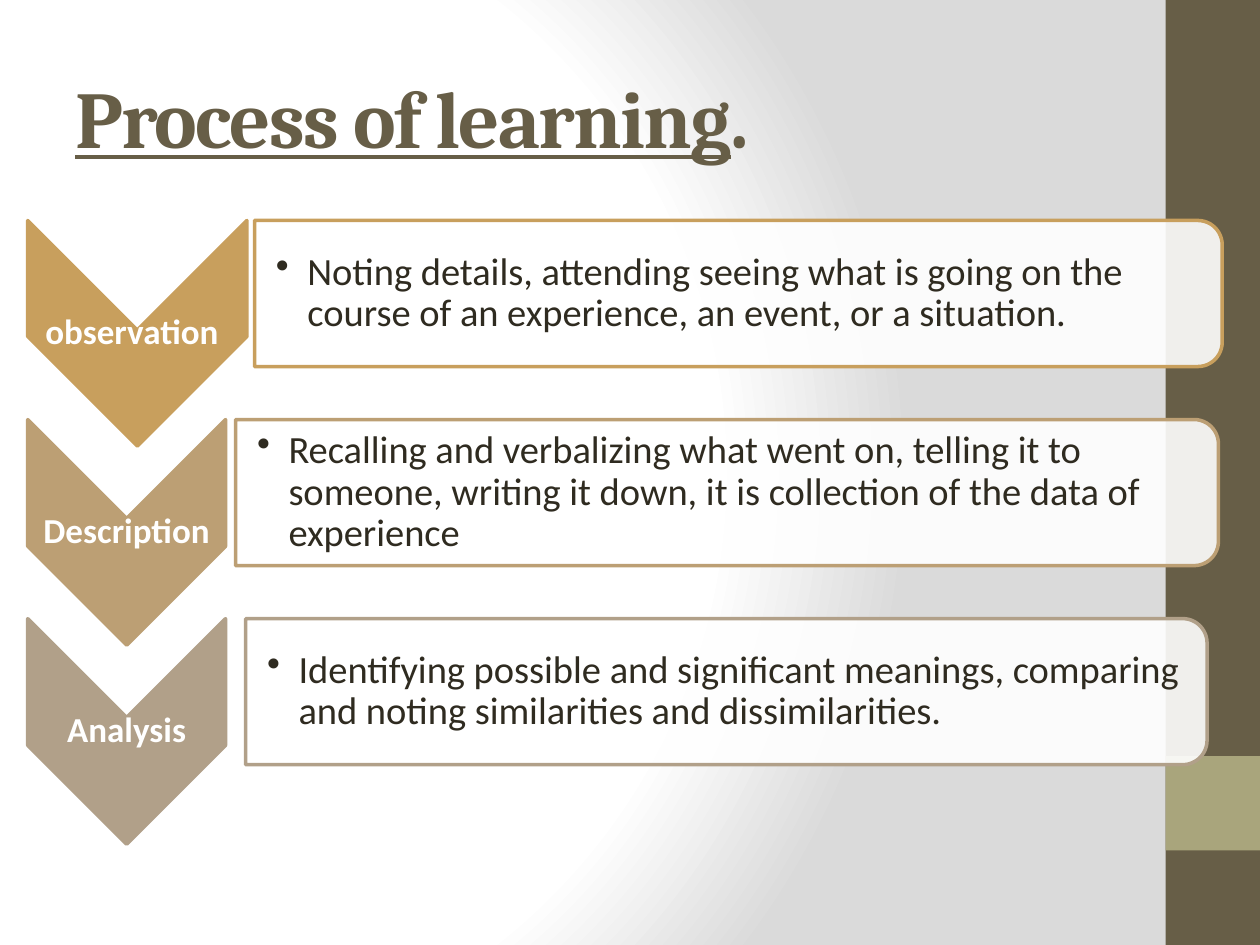
"""Build the "Process of learning" slide with three chevron steps."""
from lxml import etree
from pptx import Presentation
from pptx.dml.color import RGBColor
from pptx.enum.shapes import MSO_SHAPE
from pptx.enum.text import MSO_ANCHOR, PP_ALIGN
from pptx.oxml.ns import qn
from pptx.util import Inches, Pt

WHITE = RGBColor(0xFF, 0xFF, 0xFF)
GREY = RGBColor(0xDA, 0xDA, 0xDA)
BROWN = RGBColor(0x67, 0x5E, 0x47)
OLIVE = RGBColor(0xA9, 0xA5, 0x7C)
INK = RGBColor(0x2F, 0x2B, 0x20)
GOLD = RGBColor(0xC8, 0x9F, 0x5D)
TAN = RGBColor(0xBC, 0x9F, 0x74)
TAUPE = RGBColor(0xB1, 0xA0, 0x89)

TOP, PITCH = 1.75, 1.58
CHEVRON_LEFT, CHEVRON_H, CARD_H = 0.22, 1.79, 1.16
STEPS = [
    ("observation", GOLD, 1.74, 2.02, 7.68, PP_ALIGN.LEFT, 0.14,
     "Noting details, attending seeing what is going on the course of an "
     "experience, an event, or a situation."),
    ("Description", TAN, 1.57, 1.87, 7.8, PP_ALIGN.CENTER, 0.01,
     "Recalling and verbalizing what went on, telling it to someone, writing "
     "it down, it is collection of the data of experience"),
    ("Analysis", TAUPE, 1.57, 1.95, 7.63, PP_ALIGN.CENTER, 0.01,
     "Identifying possible and significant meanings, comparing and noting "
     "similarities and dissimilarities."),
]


def add_block(kind, x, y, w, h, fill, line=None, turned=False):
    if turned:
        x, y, w, h = x + (w - h) / 2, y + (h - w) / 2, h, w
    sp = s.shapes.add_shape(kind, Inches(x), Inches(y), Inches(w), Inches(h))
    sp.shadow.inherit = False
    sp.rotation = 90 if turned else 0
    sp.fill.solid()
    sp.fill.fore_color.rgb = fill
    if line is None:
        sp.line.fill.background()
    else:
        sp.line.color.rgb = line
        sp.line.width = Pt(2)
    return sp


def add_words(x, y, w, h, runs, font, size, color, bold, insets):
    tf = s.shapes.add_textbox(Inches(x), Inches(y), Inches(w), Inches(h)).text_frame
    tf.word_wrap = True
    tf.vertical_anchor = MSO_ANCHOR.MIDDLE
    tf.margin_left, tf.margin_top, tf.margin_right, tf.margin_bottom = map(Inches, insets)
    p = tf.paragraphs[0]
    for words, underline in runs:
        r = p.add_run()
        r.text = words
        r.font.name, r.font.size = font, Pt(size)
        r.font.bold, r.font.underline = bold, underline
        r.font.color.rgb = color
    return p


prs = Presentation()
prs.slide_width, prs.slide_height = Inches(10), Inches(7.5)
s = prs.slides.add_slide(prs.slide_layouts[6])

s.background.fill.gradient()
grad = s.element.find(".//" + qn("a:gradFill"))
for child in list(grad):
    grad.remove(child)
stops = etree.SubElement(grad, qn("a:gsLst"))
for pos, color in ((0, WHITE), (75, WHITE), (100, GREY)):
    stop = etree.SubElement(stops, qn("a:gs"), pos=str(pos * 1000))
    etree.SubElement(stop, qn("a:srgbClr"), val=str(color))
circle = etree.SubElement(grad, qn("a:path"), attrib={"path": "circle"})
etree.SubElement(circle, qn("a:fillToRect"), l="20000", t="50000", r="100000", b="50000")

add_block(MSO_SHAPE.RECTANGLE, 9.25, 0, 0.75, 7.5, BROWN)
add_block(MSO_SHAPE.RECTANGLE, 9.25, 6, 0.75, 0.75, OLIVE)

title = add_words(0.5, 0.3, 8.33, 1.25, [("Process of learning", True), (".", False)],
                  "Cambria", 46, BROWN, True, (0.1, 0.05, 0.1, 0.05))
for r in title.runs:
    r.font._element.set("spc", "-100")

for i, (label, color, chevron_w, card_x, card_w, align, inset, detail) in enumerate(STEPS):
    y = TOP + i * PITCH
    add_block(MSO_SHAPE.CHEVRON, CHEVRON_LEFT, y, chevron_w, CHEVRON_H, color, color, True)
    p = add_words(CHEVRON_LEFT, y, chevron_w, CHEVRON_H, [(label, None)],
                  "Calibri", 20, WHITE, True, (inset, 0.01, 0.01, 0.01))
    p.alignment = align
    p.line_spacing = 0.9

    card = add_block(MSO_SHAPE.ROUND_2_SAME_RECTANGLE, card_x, y, card_w, CARD_H,
                     WHITE, color, True)
    white = card.element.spPr.find(qn("a:solidFill")).find(qn("a:srgbClr"))
    etree.SubElement(white, qn("a:alpha"), val="90000")
    p = add_words(card_x, y + 0.05, card_w - 0.06, CARD_H - 0.1, [(detail, None)],
                  "Calibri", 22, INK, False, (0.17, 0.02, 0.02, 0.02))
    p.line_spacing = 0.9
    pPr = p._p.get_or_add_pPr()
    pPr.set("marL", str(Inches(0.25)))
    pPr.set("indent", str(-Inches(0.25)))
    etree.SubElement(pPr, qn("a:buChar"), char="•")

prs.save("out.pptx")
